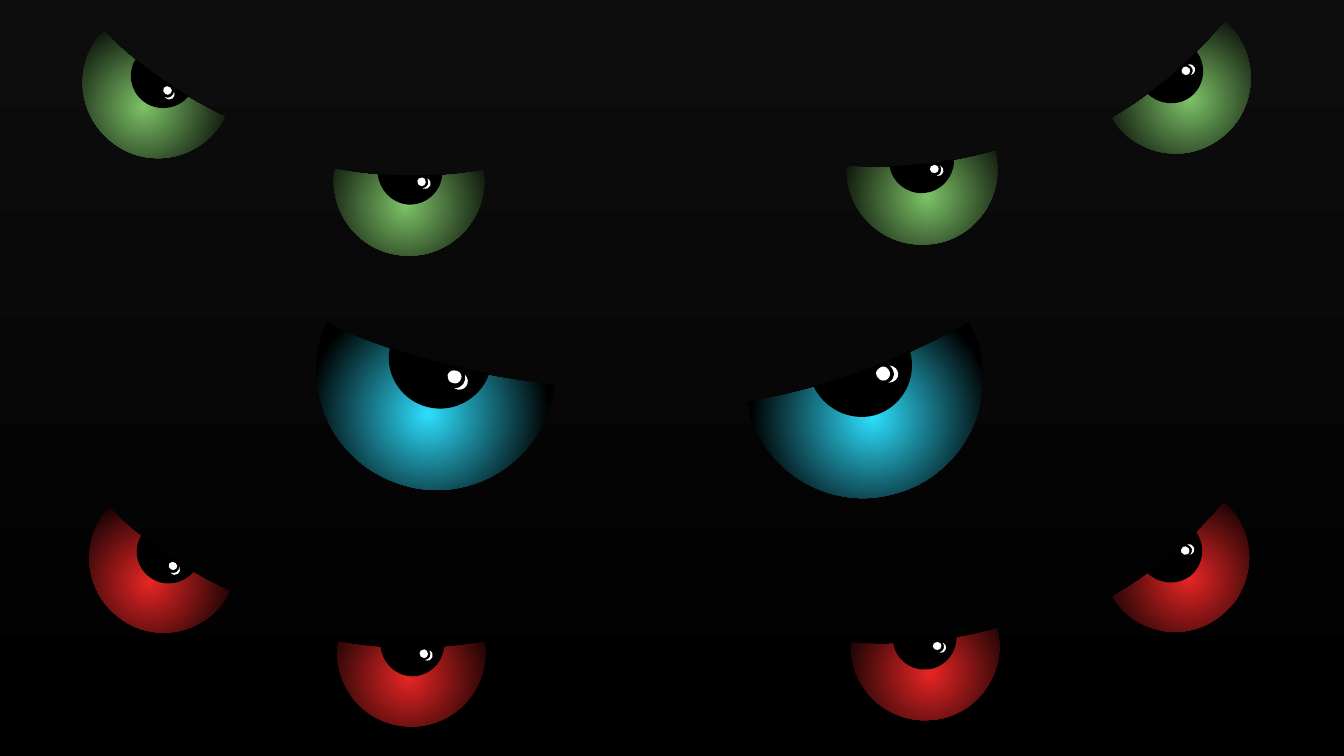
"""Build a dark slide with five pairs of glaring eyes."""
from typing import NamedTuple

from lxml import etree
from pptx import Presentation
from pptx.dml.color import RGBColor
from pptx.oxml.ns import qn
from pptx.util import Pt

BLACK = RGBColor(0x00, 0x00, 0x00)
NIGHT = RGBColor(0x0D, 0x0D, 0x0D)
WHITE = RGBColor(0xFF, 0xFF, 0xFF)
BLUE = RGBColor(0x2D, 0xDF, 0xFE)
RED = RGBColor(0xE9, 0x25, 0x25)
GREEN = RGBColor(0x7D, 0xC3, 0x68)

UNIT = 0.72
MID = (483, 311)

Point = tuple[float, float]
Curve = list[Point]


class Part(NamedTuple):
    kind: str
    curves: list[Curve]


class Pair(NamedTuple):
    x: float
    y: float
    scale: float
    turn: float
    color: RGBColor


PARTS = [
    Part("ball", [[
        (613, 286), (594, 292), (575, 296), (556, 299),
        (556, 301), (557, 304), (557, 306),
        (571, 354), (620, 381), (667, 367),
        (714, 354), (742, 304), (728, 256),
        (726, 250), (724, 245), (721, 240),
        (688, 259), (652, 275), (613, 286)]]),
    Part("pupil", [[
        (613, 285), (610, 286), (608, 286), (605, 287),
        (613, 304), (632, 314), (651, 309),
        (671, 303), (683, 282), (677, 261),
        (656, 271), (635, 279), (613, 285)]]),
    Part("ball", [[
        (297, 262), (278, 256), (260, 249), (243, 240),
        (242, 243), (241, 245), (240, 247),
        (224, 294), (250, 345), (297, 360),
        (343, 376), (394, 350), (409, 304),
        (411, 298), (412, 292), (413, 286),
        (374, 283), (336, 275), (297, 262)]]),
    Part("pupil", [[
        (297, 261), (295, 260), (292, 259), (290, 259),
        (286, 277), (297, 296), (315, 302),
        (335, 309), (357, 298), (364, 278),
        (342, 274), (319, 268), (297, 261)]]),
    Part("glint", [
        [(662, 272), (670, 273), (671, 284), (661, 285),
         (667, 281), (666, 276), (662, 272)],
        [(656, 273), (653, 274), (651, 277), (652, 279),
         (653, 282), (656, 284), (659, 283),
         (661, 282), (663, 279), (662, 277),
         (661, 274), (658, 272), (656, 273)],
        [(338, 289), (346, 293), (351, 284), (346, 279),
         (347, 284), (344, 289), (338, 289)],
        [(340, 276), (337, 275), (334, 276), (333, 279),
         (333, 282), (334, 285), (337, 285),
         (339, 286), (342, 285), (343, 282),
         (344, 280), (343, 277), (340, 276)]]),
]

PAIRS = [
    Pair(347.8, 223.9, 1, 0, BLUE),
    Pair(149, 337.9, 0.62, 19.7, RED),
    Pair(146.7, 84.2, 0.63, 20.2, GREEN),
    Pair(567.3, 336.1, 0.62, -20.6, RED),
    Pair(566.8, 80.1, 0.63, -20.9, GREEN),
]


def bend(shape) -> None:
    """Turn each three line segments into one cubic curve."""
    lines = list(shape._element.iter(qn("a:lnTo")))
    for trio in zip(lines[::3], lines[1::3], lines[2::3]):
        curve = etree.Element(qn("a:cubicBezTo"))
        trio[0].addprevious(curve)
        for line in trio:
            curve.append(line[0])
            line.getparent().remove(line)


def blend(fill, stops: list[tuple[float, RGBColor]]) -> None:
    """Fill with a gradient of two stops."""
    fill.gradient()
    for stop, (place, color) in zip(fill.gradient_stops, stops):
        stop.position = place
        stop.color.rgb = color


def glow(shape, color: RGBColor) -> None:
    """Fill a shape with a round gradient from its centre."""
    blend(shape.fill, [(0, color), (0.78, BLACK)])
    grad = shape._element.spPr.find(qn("a:gradFill"))
    grad.remove(grad.find(qn("a:lin")))
    ring = etree.SubElement(grad, qn("a:path"), path="circle")
    etree.SubElement(ring, qn("a:fillToRect"),
                     dict.fromkeys("ltrb", "50000"))


def draw_part(shapes, part: Part, pair: Pair):
    """Draw one part of a pair as a freeform."""
    size = UNIT * pair.scale

    def place(dot: Point) -> tuple[int, int]:
        """Move a point of the design onto the slide."""
        return (Pt(pair.x + (dot[0] - MID[0]) * size),
                Pt(pair.y + (dot[1] - MID[1]) * size))

    pen = None
    for curve in part.curves:
        start, *rest = [place(dot) for dot in curve]
        if pen is None:
            pen = shapes.build_freeform(*start)
        else:
            pen.move_to(*start)
        pen.add_line_segments(rest, close=True)
    shape = pen.convert_to_shape()
    bend(shape)
    shape.shadow.inherit = False
    shape.line.fill.background()
    if part.kind == "ball":
        glow(shape, pair.color)
    else:
        shape.fill.solid()
        shape.fill.fore_color.rgb = WHITE if part.kind == "glint" else BLACK
    return shape


def draw_pair(shapes, pair: Pair) -> None:
    """Draw a pair of eyes as one turned group."""
    parts = [draw_part(shapes, part, pair) for part in PARTS]
    group = shapes.add_group_shape(parts)
    group.rotation = pair.turn


def main() -> None:
    """Build and save the slide."""
    deck = Presentation()
    deck.slide_width, deck.slide_height = Pt(720), Pt(405)
    slide = deck.slides.add_slide(deck.slide_layouts[6])
    back = slide.background.fill
    blend(back, [(0, NIGHT), (0.98, BLACK)])
    back.gradient_angle = 270
    for pair in PAIRS:
        draw_pair(slide.shapes, pair)
    deck.save("out.pptx")


if __name__ == "__main__":
    main()
